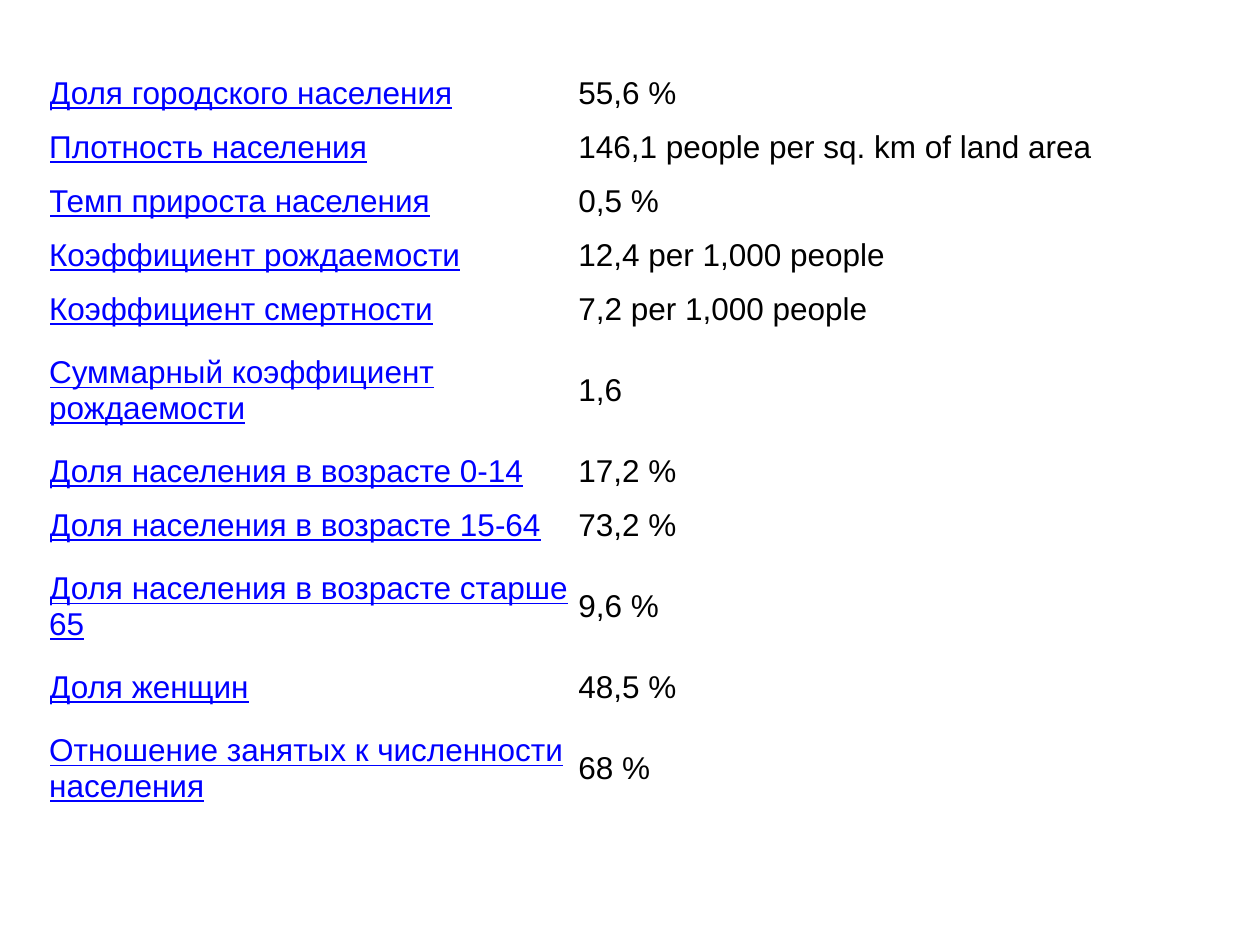
from pptx import Presentation
from pptx.dml.color import RGBColor
from pptx.enum.text import MSO_ANCHOR
from pptx.util import Inches, Pt

LINK_BLUE = "0000FF"
BLACK = "000000"

# Indicator, value, number of text lines the row holds
INDICATORS = [
    ("Доля городского населения", "55,6 %", 1),
    ("Плотность населения", "146,1 people per sq. km of land area", 1),
    ("Темп прироста населения", "0,5 %", 1),
    ("Коэффициент рождаемости", "12,4 per 1,000 people", 1),
    ("Коэффициент смертности", "7,2 per 1,000 people", 1),
    ("Суммарный коэффициент рождаемости", "1,6", 2),
    ("Доля населения в возрасте 0-14", "17,2 %", 1),
    ("Доля населения в возрасте 15-64", "73,2 %", 1),
    ("Доля населения в возрасте старше 65", "9,6 %", 2),
    ("Доля женщин", "48,5 %", 1),
    ("Отношение занятых к численности населения", "68 %", 2),
]
COLUMN_WIDTHS = (4.2, 4.32)
TABLE_HEIGHT = 6


def rgb(hex_color):
    return RGBColor.from_string(hex_color)


def write_cell(cell, text, color, underline=False):
    cell.fill.background()
    cell.vertical_anchor = MSO_ANCHOR.MIDDLE
    cell.margin_left = cell.margin_right = 0
    cell.margin_top = cell.margin_bottom = 0
    cell.text_frame.text = text
    font = cell.text_frame.paragraphs[0].runs[0].font
    font.name = "Arial"
    font.size = Pt(18)
    font.underline = underline
    font.color.rgb = rgb(color)


def add_indicator_table(slide):
    table = slide.shapes.add_table(
        len(INDICATORS), len(COLUMN_WIDTHS), Inches(0.39), Inches(0.53),
        Inches(sum(COLUMN_WIDTHS)), Inches(TABLE_HEIGHT)).table
    table.first_row = False
    table.horz_banding = False
    for column, width in zip(table.columns, COLUMN_WIDTHS):
        column.width = Inches(width)

    # Row heights share the table height by number of text lines
    line_height = TABLE_HEIGHT / sum(lines for _, _, lines in INDICATORS)
    for row, (indicator, value, lines) in zip(table.rows, INDICATORS):
        row.height = Inches(line_height * lines)
        write_cell(row.cells[0], indicator, LINK_BLUE, underline=True)
        write_cell(row.cells[1], value, BLACK)


def main():
    presentation = Presentation()
    presentation.slide_width = Inches(10)
    presentation.slide_height = Inches(7.5)
    slide = presentation.slides.add_slide(presentation.slide_layouts[6])
    add_indicator_table(slide)
    presentation.save("out.pptx")


if __name__ == "__main__":
    main()
